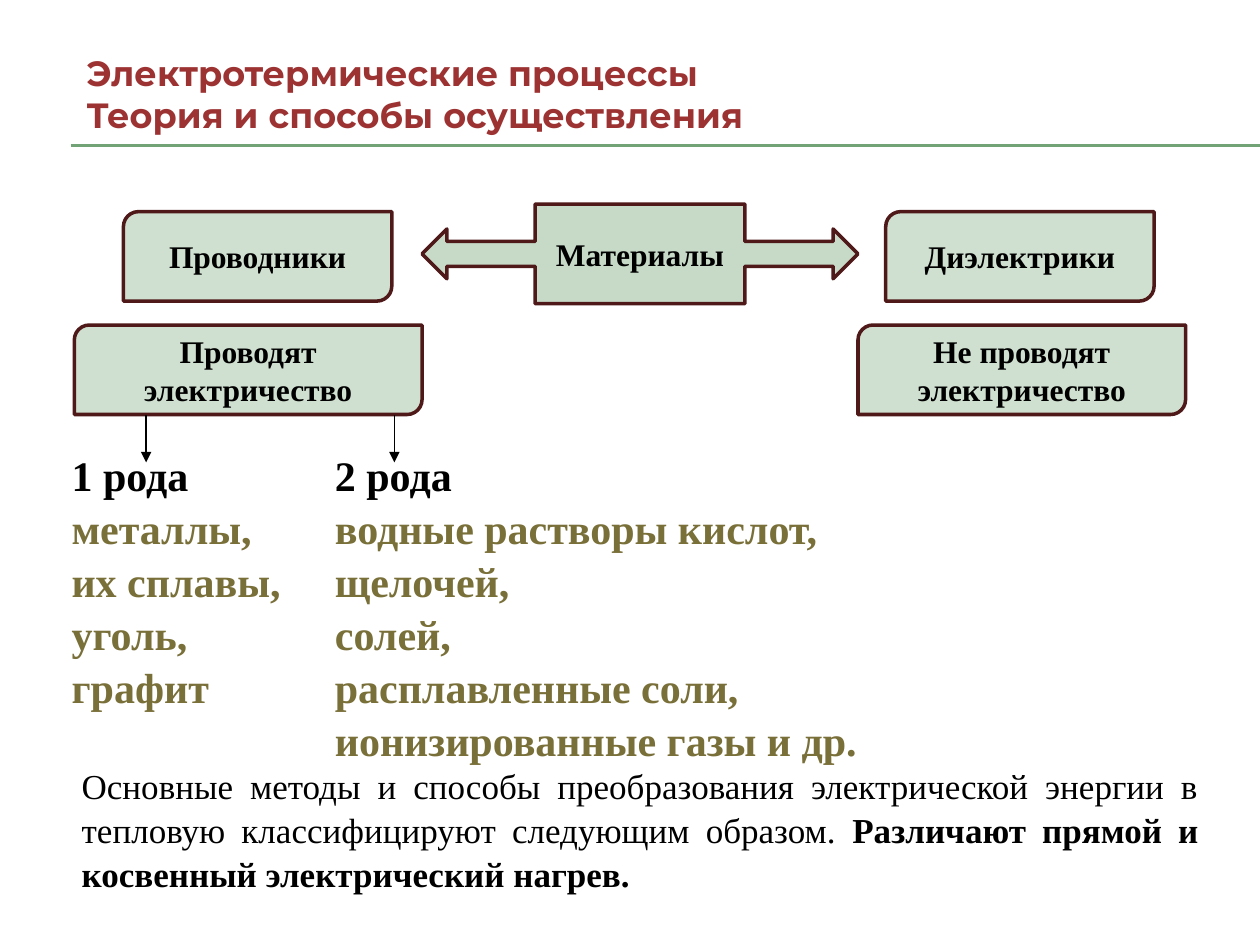
from lxml import etree
from pptx import Presentation
from pptx import util as u
from pptx.dml.color import RGBColor
from pptx.enum import shapes, text
from pptx.oxml.ns import qn

SERIF = "Times New Roman"
BLACK, OLIVE, RED, GREEN = "000000", "796F39", "9D3232", "72A376"


def color(value):
    return RGBColor.from_string(value)


def add_run(p, content, size, font, ink, bold):
    r = p.add_run()
    r.text = content
    r.font.size = u.Pt(size)
    r.font.name = font
    r.font.bold = bold
    r.font.color.rgb = color(ink)


def add_line(s, x1, y1, x2, y2, ink, width, arrow=False):
    sp = s.shapes.add_connector(shapes.MSO_CONNECTOR.STRAIGHT,
                                *map(u.Inches, (x1, y1, x2, y2)))
    sp.line.color.rgb = color(ink)
    sp.line.width = u.Pt(width)
    if arrow:
        etree.SubElement(sp.line._get_or_add_ln(), qn("a:tailEnd"), type="triangle")
    etree.SubElement(sp._element.spPr, qn("a:effectLst"))


def add_block(s, kind, box, label, fill):
    sp = s.shapes.add_shape(kind, *map(u.Inches, box))
    sp.shadow.inherit = False
    sp.fill.solid()
    sp.fill.fore_color.rgb = color(fill)
    sp.line.color.rgb = color("4F1919")
    sp.line.width = u.Pt(2)
    tf = sp.text_frame
    tf.word_wrap = True
    tf.vertical_anchor = text.MSO_ANCHOR.MIDDLE
    p = tf.paragraphs[0]
    p.alignment = text.PP_ALIGN.CENTER
    add_run(p, label, 18, SERIF, BLACK, True)


def add_text(s, box, paragraphs, size, font=SERIF, wrap=False, align=None, spacing=1.05):
    tf = s.shapes.add_textbox(*map(u.Inches, box)).text_frame
    tf.word_wrap = wrap
    tf.auto_size = text.MSO_AUTO_SIZE.SHAPE_TO_FIT_TEXT
    for i, runs in enumerate(paragraphs):
        p = tf.add_paragraph() if i else tf.paragraphs[0]
        p.alignment = align
        p.line_spacing = spacing
        for content, ink, bold in runs:
            add_run(p, content, size, font, ink, bold)


def add_kind_list(s, box, heading, items):
    paragraphs = [[(heading, BLACK, True)]]
    paragraphs += [[(item, OLIVE, True)] for item in items]
    add_text(s, box, paragraphs, 24)


def main():
    prs = Presentation()
    prs.slide_width, prs.slide_height = u.Inches(10), u.Inches(7.5)
    s = prs.slides.add_slide(prs.slide_layouts[6])

    for y in (1.15, 1.16):
        add_line(s, 0.56, y, 10, y, GREEN, 0.75)
    title = ("Электротермические процессы", "Теория и способы осуществления")
    add_text(s, (0.59, 0.36, 5.67, 0.77), [[(row, RED, True)] for row in title],
             20, "Montserrat", spacing=1.0)

    add_block(s, shapes.MSO_SHAPE.LEFT_RIGHT_ARROW_CALLOUT,
              (3.35, 1.62, 3.46, 0.79), "Материалы", "C7DAC8")
    for x, y, width, label in (
        (0.98, 1.68, 2.13, "Проводники"),
        (7.03, 1.68, 2.13, "Диэлектрики"),
        (0.59, 2.58, 2.76, "Проводят электричество"),
        (6.81, 2.58, 2.6, "Не проводят электричество"),
    ):
        add_block(s, shapes.MSO_SHAPE.ROUND_2_DIAG_RECTANGLE,
                  (x, y, width, 0.71), label, "D0E0D0")

    add_kind_list(s, (0.47, 3.5, 1.96, 2.12), "1 рода",
                  ("металлы,", "их сплавы,", "уголь,", "графит"))
    add_kind_list(s, (2.56, 3.5, 4.47, 2.52), "2 рода",
                  ("водные растворы кислот,", "щелочей,", "солей,",
                   "расплавленные соли,", "ионизированные газы и др."))
    for x in (1.16, 3.13):
        add_line(s, x, 3.29, x, 3.67, BLACK, 0.79, arrow=True)

    summary = [
        ("Основные методы и способы преобразования электрической энергии в "
         "тепловую классифицируют следующим образом. ", BLACK, False),
        ("Различают прямой и косвенный электрический нагрев.", BLACK, True),
    ]
    add_text(s, (0.55, 6, 9.06, 1.11), [summary], 20, wrap=True,
             align=text.PP_ALIGN.JUSTIFY)
    prs.save("out.pptx")


if __name__ == "__main__":
    main()
